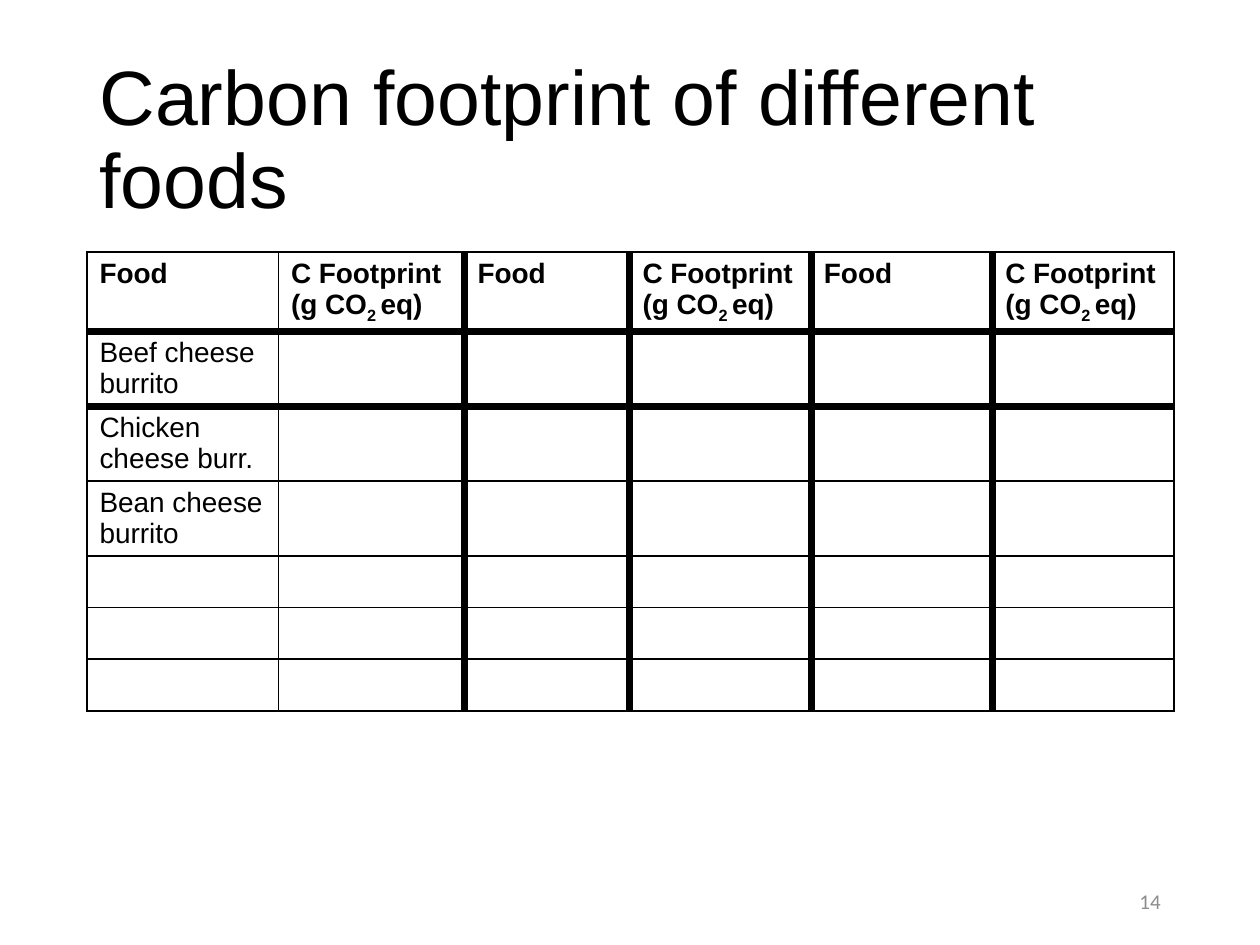
from lxml.etree import SubElement
from pptx import Presentation
from pptx.dml.color import RGBColor
from pptx.enum.text import MSO_ANCHOR, PP_ALIGN
from pptx.oxml.ns import qn
from pptx.util import Inches, Pt


class Theme:
    ink = RGBColor(0x00, 0x00, 0x00)
    muted = RGBColor(0x8C, 0x8C, 0x8C)
    body_font = "Arial"
    number_font = "Calibri"
    title_size = Pt(44)
    table_size = Pt(16)
    number_size = Pt(12)
    thin_line = Pt(1)
    thick_line = Pt(4.5)


def add_run(paragraph, text, size, font=Theme.body_font, color=Theme.ink, bold=False):
    run = paragraph.add_run()
    run.text = text
    run.font.size = size
    run.font.name = font
    run.font.color.rgb = color
    run.font.bold = bold
    return run


def add_border(cell, side, width):
    line = SubElement(cell._tc.get_or_add_tcPr(), qn(f"a:ln{side}"), w=str(int(width)))
    fill = SubElement(line, qn("a:solidFill"))
    SubElement(fill, qn("a:srgbClr"), val=str(Theme.ink))


presentation = Presentation()
presentation.slide_width = Inches(10)
presentation.slide_height = Inches(7.5)
slide = presentation.slides.add_slide(presentation.slide_layouts[5])

# Title
title = slide.shapes.title
title.left, title.top = Inches(0.69), Inches(0.4)
title.width, title.height = Inches(8.62), Inches(1.45)
title.text_frame.vertical_anchor = MSO_ANCHOR.MIDDLE
title.text_frame.word_wrap = True
paragraph = title.text_frame.paragraphs[0]
paragraph.alignment = PP_ALIGN.LEFT
paragraph.line_spacing = 0.9
add_run(paragraph, "Carbon footprint of different foods", Theme.title_size)

# Table grid
column_widths = [1.52, 1.48, 1.31, 1.44, 1.44, 1.44]
foods = ["Beef cheese burrito", "Chicken cheese burr.", "Bean cheese burrito"]
row_count = 7
row_height = 0.41
table = slide.shapes.add_table(
    row_count, len(column_widths), Inches(0.69), Inches(2),
    Inches(sum(column_widths)), Inches(row_height * row_count),
).table
table.first_row = False
table.horz_banding = False
for column, width in zip(table.columns, column_widths):
    column.width = Inches(width)
for row in table.rows:
    row.height = Inches(row_height)

# Borders: thick inner verticals from the second column, thick lines around the first food
thick_verticals = {2, 3, 4, 5}
thick_horizontals = {1, 2}
for row_index, row in enumerate(table.rows):
    for column_index, cell in enumerate(row.cells):
        edges = [
            ("L", column_index in thick_verticals),
            ("R", column_index + 1 in thick_verticals),
            ("T", row_index in thick_horizontals),
            ("B", row_index + 1 in thick_horizontals),
        ]
        for side, is_thick in edges:
            add_border(cell, side, Theme.thick_line if is_thick else Theme.thin_line)
        cell.fill.background()

# Header row: pairs of food and footprint
for column_index in range(0, len(column_widths), 2):
    food_paragraph = table.cell(0, column_index).text_frame.paragraphs[0]
    add_run(food_paragraph, "Food", Theme.table_size, bold=True)
    footprint_frame = table.cell(0, column_index + 1).text_frame
    add_run(footprint_frame.paragraphs[0], "C Footprint", Theme.table_size, bold=True)
    unit_paragraph = footprint_frame.add_paragraph()
    add_run(unit_paragraph, "(g CO", Theme.table_size, bold=True)
    subscript = add_run(unit_paragraph, "2 ", Theme.table_size, bold=True)
    subscript.font._element.set("baseline", "-25000")
    add_run(unit_paragraph, "eq)", Theme.table_size, bold=True)

# Food names
for row_index, food in enumerate(foods, start=1):
    add_run(table.cell(row_index, 0).text_frame.paragraphs[0], food, Theme.table_size)

# Slide number
number_box = slide.shapes.add_textbox(Inches(7.06), Inches(6.95), Inches(2.25), Inches(0.4))
number_box.text_frame.word_wrap = True
number_box.text_frame.vertical_anchor = MSO_ANCHOR.MIDDLE
paragraph = number_box.text_frame.paragraphs[0]
paragraph.alignment = PP_ALIGN.RIGHT
add_run(paragraph, "14", Theme.number_size, Theme.number_font, Theme.muted)

presentation.save("out.pptx")
